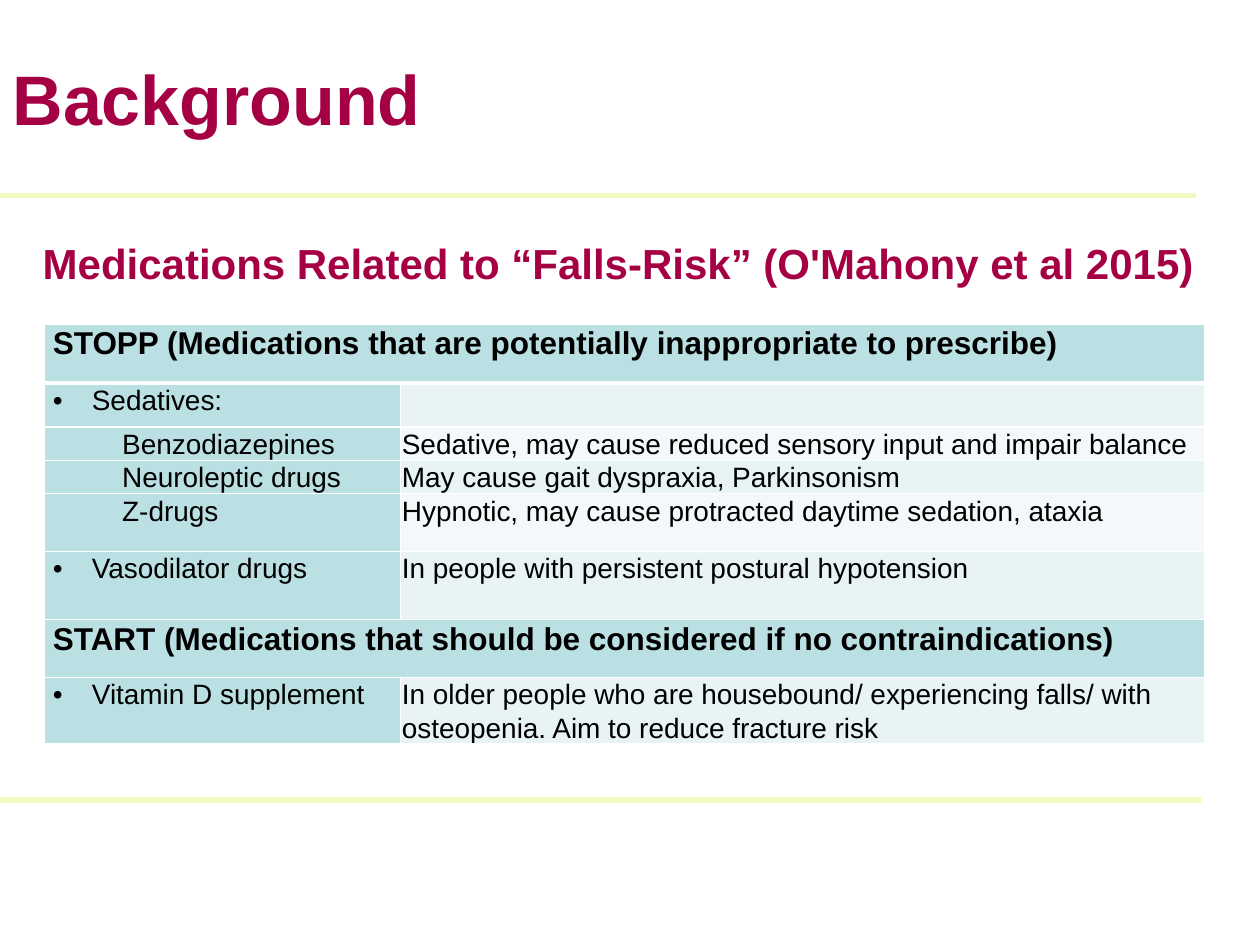
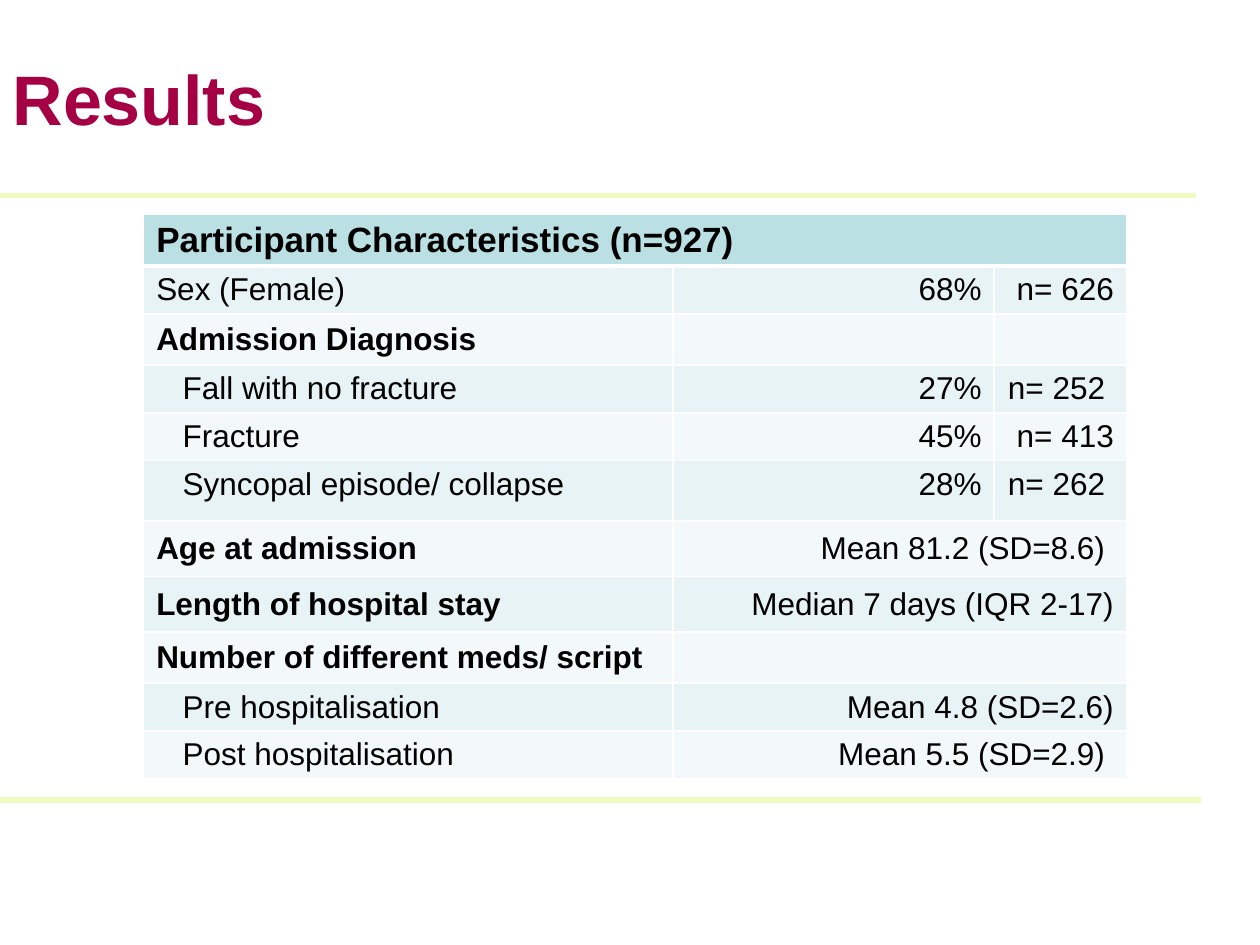
import pptx
import pptx.util
import pptx.dml.color
import pptx.enum.shapes
import pptx.enum.text
import pptx.oxml
import pptx.oxml.ns
from lxml import etree

Inches = pptx.util.Inches
Pt = pptx.util.Pt
Color = pptx.dml.color.RGBColor
Align = pptx.enum.text.PP_ALIGN
Anchor = pptx.enum.text.MSO_ANCHOR
qn = pptx.oxml.ns.qn

# Shared look
FONT = "Arial"
WINE = Color(0xA5, 0x00, 0x44)
LIME = Color(0xEF, 0xFB, 0xC1)
BLACK = Color(0x00, 0x00, 0x00)
TEAL = Color(0xBB, 0xE0, 0xE3)
MIST = Color(0xE7, 0xF3, 0xF4)
PALE = Color(0xF3, 0xF9, 0xFA)
BANDS = (PALE, MIST)
RULES = ((1.55, 9.49), (6.35, 9.53))

# Drug table: height, kind, drug, effect
DRUGS = (
    (0.47, "head", "STOPP (Medications that are potentially inappropriate to prescribe)", ""),
    (0.35, "bullet", "Sedatives:", ""),
    (0.26, "sub", "Benzodiazepines",
     "Sedative, may cause reduced sensory input and impair balance"),
    (0.26, "sub", "Neuroleptic drugs", "May cause gait dyspraxia, Parkinsonism"),
    (0.46, "sub", "Z-drugs", "Hypnotic, may cause protracted daytime sedation, ataxia"),
    (0.54, "bullet", "Vasodilator drugs", "In people with persistent postural hypotension"),
    (0.46, "head", "START (Medications that should be considered if no contraindications)", ""),
    (0.52, "bullet", "Vitamin D supplement",
     "In older people who are housebound/ experiencing falls/ with osteopenia. "
     "Aim to reduce fracture risk"),
)

# Patient table: height, kind, label, values (one value spans two columns)
TRAITS = (
    (0.4, "head", "Participant Characteristics (n=927)", ()),
    (0.38, "plain", "Sex (Female)", ("68%", "n= 626")),
    (0.38, "bold", "Admission Diagnosis", ("", "")),
    (0.38, "sub", "Fall with no fracture", ("27%", "n= 252 ")),
    (0.38, "sub", "Fracture", ("45%", "n= 413")),
    (0.48, "sub", "Syncopal episode/ collapse", ("28%", "n= 262 ")),
    (0.44, "bold", "Age at admission", ("Mean 81.2 (SD=8.6) ",)),
    (0.44, "bold", "Length of hospital stay", ("Median 7 days (IQR 2-17)",)),
    (0.38, "bold", "Number of different meds/ script", ("",)),
    (0.38, "sub", "Pre hospitalisation", ("Mean 4.8 (SD=2.6)",)),
    (0.38, "sub", "Post hospitalisation", ("Mean 5.5 (SD=2.9) ",)),
)


def add_run(para, text, size, bold=False, color=BLACK):
    run = para.add_run()
    run.text = text
    run.font.name = FONT
    run.font.size = Pt(size)
    run.font.bold = bold
    run.font.color.rgb = color


def set_head(shape, text, size):
    frame = shape.text_frame
    frame.word_wrap = True
    frame.auto_size = pptx.enum.text.MSO_AUTO_SIZE.NONE
    frame.vertical_anchor = Anchor.MIDDLE
    para = frame.paragraphs[0]
    para.alignment = Align.LEFT
    add_run(para, text, size, True, WINE)


def add_rule(slide, top, right):
    line = slide.shapes.add_connector(
        pptx.enum.shapes.MSO_CONNECTOR.STRAIGHT,
        0, Inches(top), Inches(right), Inches(top))
    line.line.color.rgb = LIME
    line.line.width = Pt(3)
    etree.SubElement(line._element.spPr, qn("a:effectLst"))


def add_slide(deck, title):
    slide = deck.slides.add_slide(deck.slide_layouts[5])
    for top, right in RULES:
        add_rule(slide, top, right)
    head = slide.shapes.title
    head.left, head.top = 0, 0
    head.width, head.height = Inches(8.3), Inches(1.55)
    set_head(head, title, 40)
    return slide


def add_grid(slide, left, top, cols, highs):
    frame = slide.shapes.add_table(
        len(highs), len(cols), Inches(left), Inches(top),
        Inches(sum(cols)), Inches(sum(highs)))
    grid = frame.table
    grid.first_row = grid.horz_banding = False
    for col, width in zip(grid.columns, cols):
        col.width = Inches(width)
    for row, high in zip(grid.rows, highs):
        row.height = Inches(high)
    # White borders, thick below the first row
    for r, row in enumerate(grid.rows):
        for cell in row.cells:
            edges = {"L": 1, "R": 1, "T": 3 if r == 1 else 1, "B": 3 if r == 0 else 1}
            for side, width in edges.items():
                add_edge(cell, side, width)
    return grid


def add_edge(cell, side, width):
    props = cell._tc.get_or_add_tcPr()
    line = etree.SubElement(props, qn("a:ln" + side), w=str(Pt(width)))
    fill = etree.SubElement(line, qn("a:solidFill"))
    etree.SubElement(fill, qn("a:srgbClr"), val="FFFFFF")


def set_cell(cell, text, size, fill, bold=False, side=0.1, edge=0.05, indent=0,
             bullet=False, align=Align.LEFT, anchor=Anchor.TOP, space=1.0):
    cell.fill.solid()
    cell.fill.fore_color.rgb = fill
    cell.margin_left = cell.margin_right = Inches(side)
    cell.margin_top = cell.margin_bottom = Inches(edge)
    cell.vertical_anchor = anchor
    if not text:
        return
    para = cell.text_frame.paragraphs[0]
    para.alignment = align
    para.line_spacing = space
    props = para._p.get_or_add_pPr()
    props.set("marL", str(Inches(indent)))
    props.set("indent", str(-Inches(indent) if bullet else 0))
    if bullet:
        etree.SubElement(props, qn("a:buFont"), typeface=FONT)
        etree.SubElement(props, qn("a:buChar"), char="•")
    add_run(para, text, size, bold)


def add_drugs(slide):
    grid = add_grid(slide, 0.35, 2.57, (2.83, 6.38), [row[0] for row in DRUGS])
    indents = {"head": 0, "bullet": 0.31, "sub": 0.55}
    for r, (_, kind, drug, effect) in enumerate(DRUGS):
        head = kind == "head"
        name, note = grid.cell(r, 0), grid.cell(r, 1)
        if head:
            name.merge(note)
        set_cell(name, drug, 18 if head else 16, TEAL, head, 0.07, 0,
                 indents[kind], kind == "bullet", space=1.07)
        if not head:
            set_cell(note, effect, 16, BANDS[r % 2], side=0.01, edge=0, space=1.07)


def add_traits(slide):
    grid = add_grid(slide, 1.14, 1.7, (4.2, 2.55, 1.05), [row[0] for row in TRAITS])
    for r, (_, kind, label, values) in enumerate(TRAITS):
        head = kind == "head"
        fill = TEAL if head else BANDS[r % 2]
        top = head or label.startswith("Syncopal")
        anchor = Anchor.TOP if top else Anchor.MIDDLE
        # The last filled cell stretches to the right edge
        last = len(values)
        if last < 2:
            grid.cell(r, last).merge(grid.cell(r, 2))
        set_cell(grid.cell(r, 0), label, 20 if head else 18, fill,
                 kind in ("head", "bold"), anchor=anchor,
                 indent=0.21 if kind == "sub" else 0)
        for c, value in enumerate(values, 1):
            set_cell(grid.cell(r, c), value, 18, fill, align=Align.RIGHT, anchor=anchor)


def main():
    deck = pptx.Presentation()
    deck.slide_width, deck.slide_height = Inches(10), Inches(7.5)

    # Background
    slide = add_slide(deck, "Background")
    box = slide.shapes.add_textbox(Inches(0.24), Inches(1.85), Inches(9.45), Inches(0.47))
    set_head(box, "Medications Related to “Falls-Risk” (O'Mahony et al 2015)", 24)
    add_drugs(slide)

    # Results
    add_traits(add_slide(deck, "Results"))

    deck.save("out.pptx")


if __name__ == "__main__":
    main()
